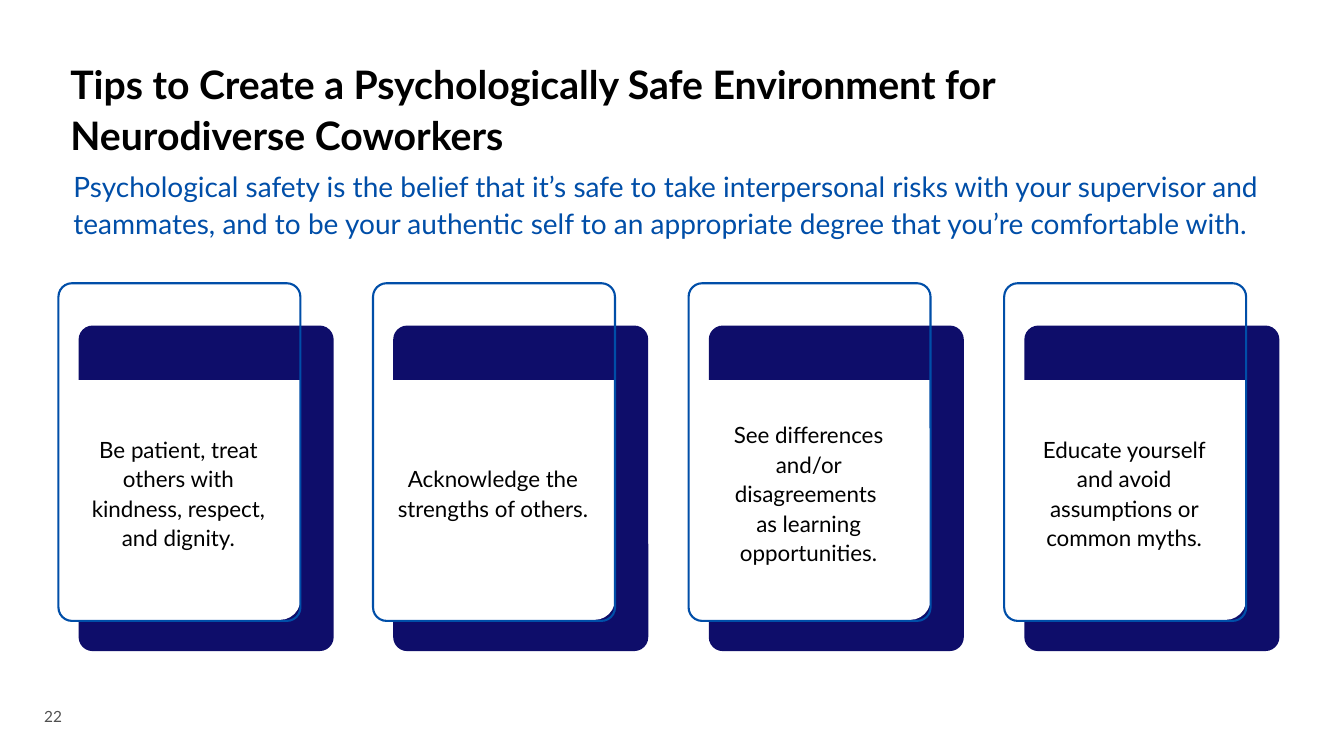
from dataclasses import dataclass

from pptx import Presentation
from pptx.dml.color import RGBColor
from pptx.enum.shapes import MSO_SHAPE
from pptx.enum.text import MSO_ANCHOR, PP_ALIGN
from pptx.util import Pt

PX = 9144  # EMU per px, 100 px to the inch


@dataclass(frozen=True)
class Theme:
    font: str = "Lato"
    black: RGBColor = RGBColor(0x00, 0x00, 0x00)
    white: RGBColor = RGBColor(0xFF, 0xFF, 0xFF)
    blue: RGBColor = RGBColor(0x00, 0x4E, 0xA8)
    navy: RGBColor = RGBColor(0x0E, 0x0D, 0x6A)
    grey: RGBColor = RGBColor(0x50, 0x50, 0x50)
    title_size: int = 28
    subtitle_size: int = 20
    tip_size: int = 16
    number_size: int = 11
    line_spacing: float = 1.1
    outline: float = 1.5


THEME = Theme()

TITLE = "Tips to Create a Psychologically Safe Environment for Neurodiverse Coworkers"
SUBTITLE = (
    "Psychological safety is the belief that it’s safe to take interpersonal risks "
    "with your supervisor and teammates, and to be your authentic self to an "
    "appropriate degree that you’re comfortable with."
)
TIPS = [
    ["Be patient, treat others with kindness, respect, and dignity."],
    ["Acknowledge the strengths of others."],
    ["See differences and/or disagreements ", "as learning opportunities."],
    ["Educate yourself and avoid assumptions or common myths."],
]


def scaled(box):
    return [length * PX for length in box]


def add_text(shapes, box, lines, size, color, bold=False, align=PP_ALIGN.LEFT,
             anchor=MSO_ANCHOR.TOP, spacing=THEME.line_spacing):
    frame = shapes.add_textbox(*scaled(box)).text_frame
    frame.word_wrap = True
    frame.vertical_anchor = anchor
    frame.text = "\n".join(lines)
    for paragraph in frame.paragraphs:
        paragraph.alignment = align
        paragraph.line_spacing = spacing
        paragraph.font.name = THEME.font
        paragraph.font.size = Pt(size)
        paragraph.font.bold = bold
        paragraph.font.color.rgb = color


def add_panel(shapes, kind, box, corners, fill=None, line=None):
    """Add a rounded panel; without a fill or line colour that part is clear."""
    panel = shapes.add_shape(kind, *scaled(box))
    panel.shadow.inherit = False
    for index, corner in enumerate(corners):
        panel.adjustments[index] = corner
    if fill is None:
        panel.fill.background()
    else:
        panel.fill.solid()
        panel.fill.fore_color.rgb = fill
    if line is None:
        panel.line.fill.background()
    else:
        panel.line.color.rgb = line
        panel.line.width = Pt(THEME.outline)


def add_header(slide, left, top, width):
    add_text(slide.shapes, (left + 10, top, width - 10, 60), [TITLE],
             THEME.title_size, THEME.black, bold=True)
    add_text(slide.shapes, (left + 13, top + 110, 1270, 99), [SUBTITLE],
             THEME.subtitle_size, THEME.blue)


def add_tip_card(slide, left, top, width, height, lines):
    """Draw an outlined card inside the box, with a navy panel offset behind it."""
    shapes = slide.shapes.add_group_shape().shapes
    add_panel(shapes, MSO_SHAPE.ROUNDED_RECTANGLE,
              (left + 21, top + 42, width - 21, height - 42), [0.055],
              fill=THEME.navy)
    add_panel(shapes, MSO_SHAPE.ROUND_2_SAME_RECTANGLE,
              (left, top + 96, width - 33, 238), [0, 0.086], fill=THEME.white)
    add_text(shapes, (left + 11, top + 96, width - 56, 223), lines,
             THEME.tip_size, THEME.black, align=PP_ALIGN.CENTER,
             anchor=MSO_ANCHOR.MIDDLE)
    add_panel(shapes, MSO_SHAPE.ROUNDED_RECTANGLE,
              (left + 1, top, width - 34, height - 30), [0.056], line=THEME.blue)


def add_tip_row(slide, left, top, width, height):
    card_width = 274
    for index, lines in enumerate(TIPS):
        offset = (width - card_width) * index // (len(TIPS) - 1)
        add_tip_card(slide, left + offset, top, card_width, height, lines)


def add_page_number(slide, box):
    add_text(slide.shapes, box, ["22"], THEME.number_size, THEME.grey,
             anchor=MSO_ANCHOR.BOTTOM, spacing=1.0)


def main():
    presentation = Presentation()
    presentation.slide_width = 1333 * PX
    presentation.slide_height = 750 * PX
    slide = presentation.slides.add_slide(presentation.slide_layouts[6])
    add_header(slide, 50, 50, 1111)
    add_tip_row(slide, 57, 281, 1212, 365)
    add_page_number(slide, (34, 697, 50, 28))
    presentation.save("out.pptx")


if __name__ == "__main__":
    main()
